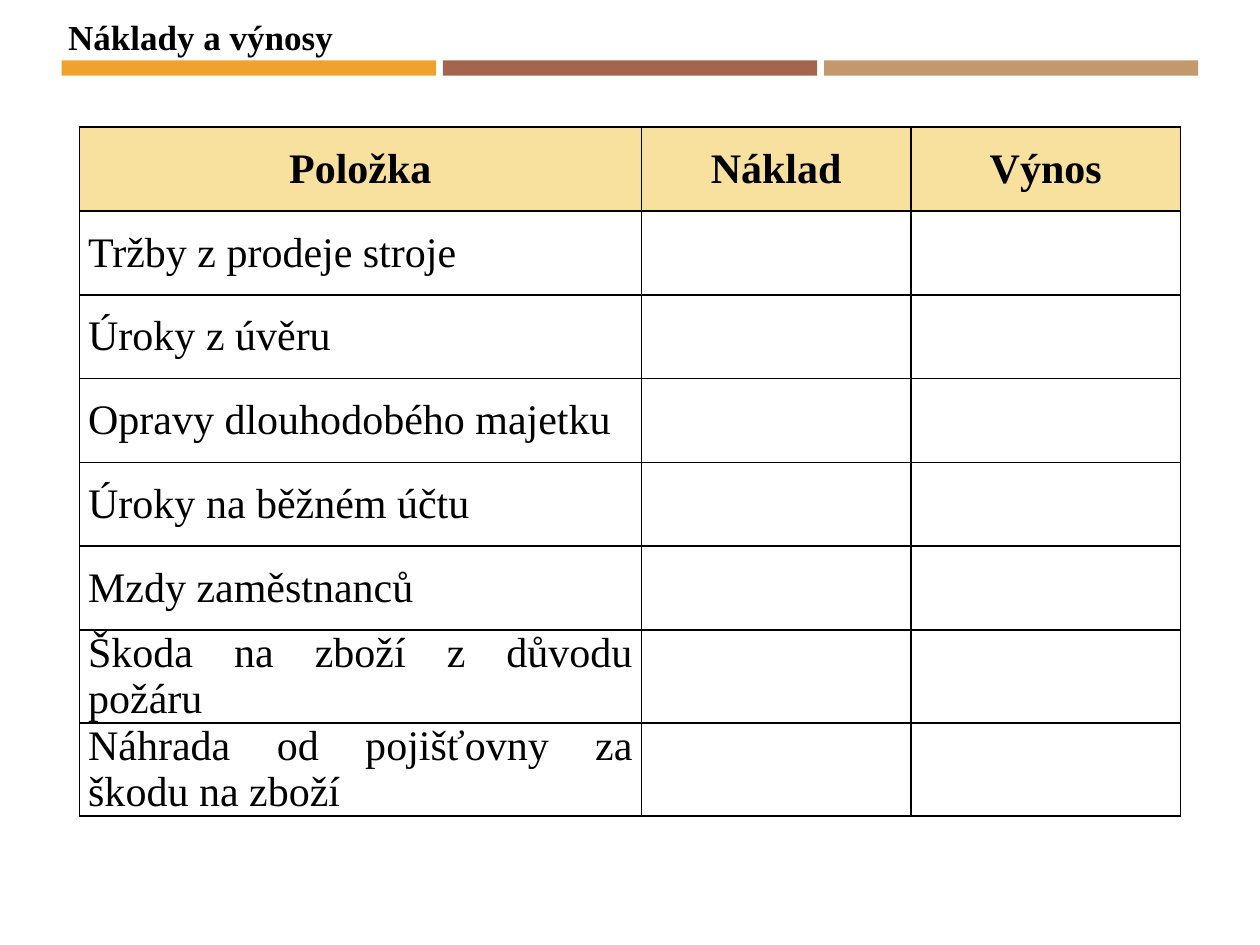
from lxml import etree
from pptx import Presentation
from pptx.dml.color import RGBColor
from pptx.enum.shapes import MSO_SHAPE
from pptx.enum.text import MSO_ANCHOR, MSO_AUTO_SIZE, PP_ALIGN
from pptx.oxml.ns import qn
from pptx.util import Inches, Pt

RECTANGLE = MSO_SHAPE.RECTANGLE
MIDDLE, TOP = MSO_ANCHOR.MIDDLE, MSO_ANCHOR.TOP
LEFT, CENTER, JUSTIFY = PP_ALIGN.LEFT, PP_ALIGN.CENTER, PP_ALIGN.JUSTIFY
NO_AUTOFIT = MSO_AUTO_SIZE.NONE
FONT = "Times New Roman"
BLACK = "000000"
HEADER_FILL = "F8E19F"


def color(hex_string):
    return RGBColor.from_string(hex_string)


def format_paragraph(paragraph, size, bold, alignment):
    paragraph.alignment = alignment
    paragraph.font.name = FONT
    paragraph.font.size = Pt(size)
    paragraph.font.bold = bold
    paragraph.font.color.rgb = color(BLACK)


presentation = Presentation()
presentation.slide_width = Inches(10)
presentation.slide_height = Inches(7.5)
slide = presentation.slides.add_slide(presentation.slide_layouts[5])

# Coloured bars under the title
for index, bar_color in enumerate(["F0A22E", "A5644E", "C3986D"]):
    bar = slide.shapes.add_shape(RECTANGLE, Inches(0.49 + index * 3.025), Inches(0.48),
                                 Inches(2.97), Inches(0.12))
    bar.shadow.inherit = False
    bar.fill.solid()
    bar.fill.fore_color.rgb = color(bar_color)
    bar.line.fill.background()

# Title
title = slide.shapes.title
title.left, title.top = Inches(0.44), Inches(0.07)
title.width, title.height = Inches(2.32), Inches(0.44)
title.text_frame.text = "Náklady a výnosy"
title.text_frame.word_wrap = False
title.text_frame.auto_size = NO_AUTOFIT
title.text_frame.vertical_anchor = TOP
format_paragraph(title.text_frame.paragraphs[0], 20, True, LEFT)

# Table of costs and revenues
headers = ["Položka", "Náklad", "Výnos"]
items = [
    "Tržby z prodeje stroje",
    "Úroky z úvěru",
    "Opravy dlouhodobého majetku",
    "Úroky na běžném účtu",
    "Mzdy zaměstnanců",
    "Škoda na zboží z důvodu požáru",
    "Náhrada od pojišťovny za škodu na zboží",
]
rows = [headers] + [[item, "", ""] for item in items]
table = slide.shapes.add_table(len(rows), len(headers), Inches(0.63), Inches(1.01),
                               Inches(8.74), Inches(5.28)).table
for column, width in zip(table.columns, [4.46, 2.14, 2.14]):
    column.width = Inches(width)

for row_index, row in enumerate(rows):
    table.rows[row_index].height = Inches(0.665)
    is_header = row_index == 0
    for column_index, text in enumerate(row):
        cell = table.cell(row_index, column_index)
        cell.vertical_anchor = MIDDLE
        cell.margin_left = cell.margin_right = Inches(0.07)
        cell.margin_top = cell.margin_bottom = 0
        if text:
            cell.text = text
            format_paragraph(cell.text_frame.paragraphs[0], 24, is_header,
                             CENTER if is_header else JUSTIFY)

        # Borders come before the fill in the cell properties
        properties = cell._tc.get_or_add_tcPr()
        for side in ["lnL", "lnR", "lnT", "lnB"]:
            border = etree.SubElement(properties, qn(f"a:{side}"), w=str(Pt(1)))
            line_fill = etree.SubElement(border, qn("a:solidFill"))
            etree.SubElement(line_fill, qn("a:srgbClr"), val=BLACK)
        if is_header:
            cell.fill.solid()
            cell.fill.fore_color.rgb = color(HEADER_FILL)
        else:
            cell.fill.background()

presentation.save("out.pptx")
